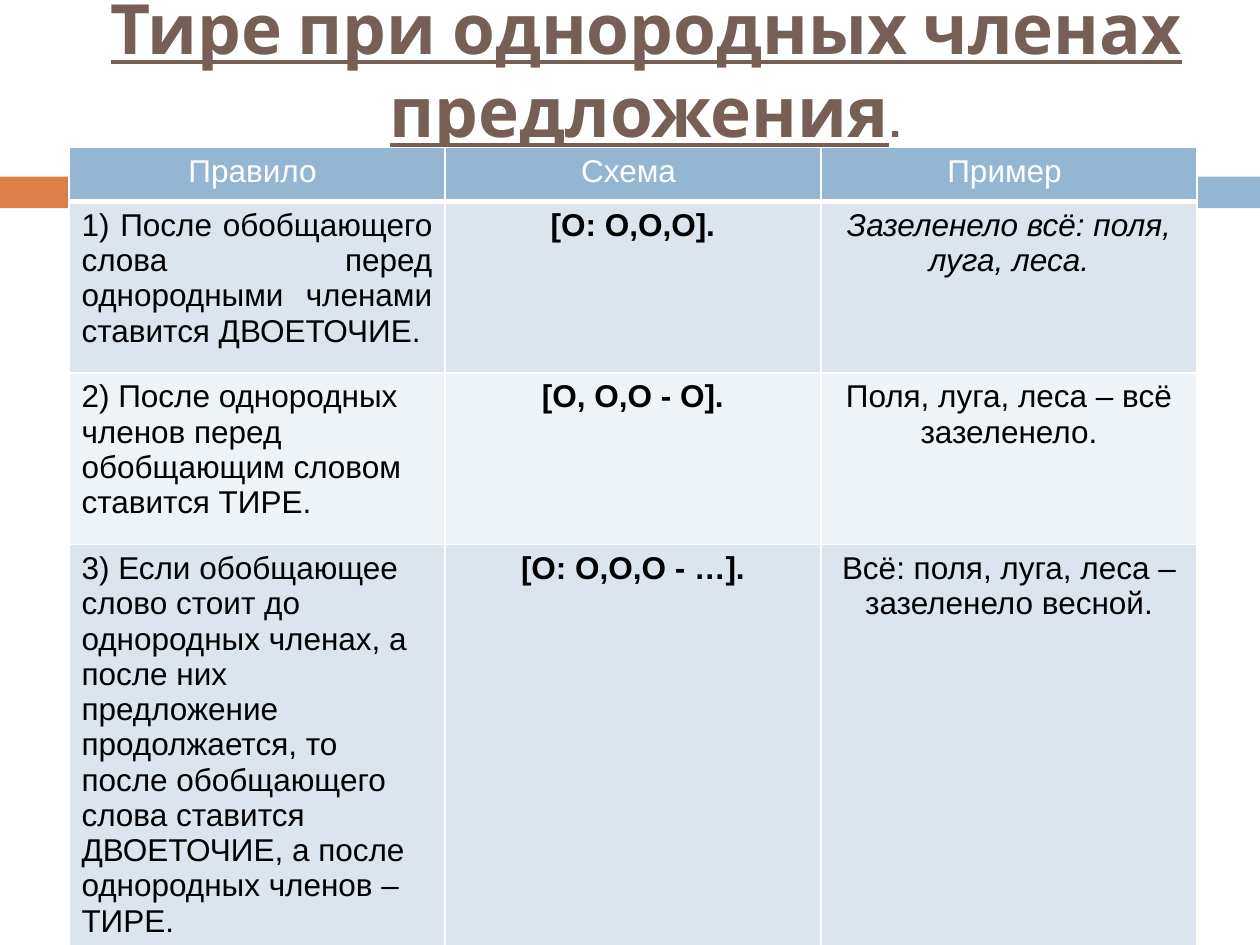
from dataclasses import dataclass

from lxml.etree import SubElement
from pptx import Presentation
from pptx.dml.color import RGBColor
from pptx.enum.shapes import MSO_SHAPE
from pptx.enum.text import MSO_ANCHOR, PP_ALIGN
from pptx.oxml.ns import qn
from pptx.slide import Slide
from pptx.table import _Cell
from pptx.util import Cm, Pt

COLORS = {
    "orange": "DD8047",
    "blue": "94B6D2",
    "brown": "775F55",
    "band_dark": "DCE5EE",
    "band_light": "EEF3F7",
    "white": "FFFFFF",
    "black": "000000",
}
COLUMN_WIDTH = Cm(7.58)
HEADINGS = ("Правило ", "Схема ", "Пример ")


@dataclass
class Stripe:
    left: float
    width: float
    color: str


@dataclass
class Rule:
    statement: str
    scheme: str
    example: str
    height: float
    statement_align: PP_ALIGN = PP_ALIGN.LEFT
    example_italic: bool = False


STRIPES = (Stripe(0, 1.48, "orange"), Stripe(1.65, 23.75, "blue"))
RULES = (
    Rule(
        "1) После обобщающего слова перед однородными членами ставится ДВОЕТОЧИЕ.",
        "[О: О,О,О].",
        "Зазеленело всё: поля, луга, леса.",
        3.46,
        statement_align=PP_ALIGN.JUSTIFY,
        example_italic=True,
    ),
    Rule(
        "2) После однородных членов перед обобщающим словом ставится ТИРЕ.",
        "[О, О,О - О].",
        "Поля, луга, леса – всё зазеленело.",
        3.46,
    ),
    Rule(
        "3) Если обобщающее слово стоит до однородных членах, а после них "
        "предложение продолжается, то после обобщающего слова ставится "
        "ДВОЕТОЧИЕ, а после однородных членов – ТИРЕ.",
        "[О: О,О,О - …].",
        "Всё: поля, луга, леса – зазеленело весной.",
        7.47,
    ),
)


def rgb(name: str) -> RGBColor:
    return RGBColor.from_string(COLORS[name])


def draw_stripe(slide: Slide, stripe: Stripe) -> None:
    bar = slide.shapes.add_shape(
        MSO_SHAPE.RECTANGLE, Cm(stripe.left), Cm(3.56), Cm(stripe.width), Cm(0.64)
    )
    bar.shadow.inherit = False
    bar.fill.solid()
    bar.fill.fore_color.rgb = rgb(stripe.color)
    bar.line.fill.background()


def draw_title(slide: Slide) -> None:
    frame = slide.shapes.add_textbox(Cm(1.7), Cm(0), Cm(22.66), Cm(2.77)).text_frame
    frame.word_wrap = True
    frame.vertical_anchor = MSO_ANCHOR.MIDDLE
    heading = frame.paragraphs[0]
    heading.alignment = PP_ALIGN.CENTER
    for words, emphasized in (
        ("Тире при однородных членах предложения", True),
        (".", False),
    ):
        run = heading.add_run()
        run.text = words
        run.font.name = "Cabin"
        run.font.size = Pt(39.6)
        run.font.bold = run.font.underline = emphasized
        run.font.color.rgb = rgb("brown")


def draw_borders(cell: _Cell, top: float, bottom: float) -> None:
    properties = cell._tc.get_or_add_tcPr()
    for side, width in (("L", 1), ("R", 1), ("T", top), ("B", bottom)):
        border = SubElement(properties, qn(f"a:ln{side}"), w=str(Pt(width)))
        fill = SubElement(border, qn("a:solidFill"))
        SubElement(fill, qn("a:srgbClr"), val=COLORS["white"])


def fill_cell(
    cell: _Cell,
    words: str,
    fill: str,
    color: str = "black",
    align: PP_ALIGN = PP_ALIGN.CENTER,
    bold: bool = False,
    italic: bool = False,
    top: float = 1,
    bottom: float = 1,
) -> None:
    draw_borders(cell, top, bottom)
    cell.fill.solid()
    cell.fill.fore_color.rgb = rgb(fill)
    cell.text_frame.text = words
    paragraph = cell.text_frame.paragraphs[0]
    paragraph.alignment = align
    font = paragraph.runs[0].font
    font.name = "Arial"
    font.size = Pt(18)
    font.bold = bold
    font.italic = italic
    font.color.rgb = rgb(color)


def draw_rules(slide: Slide) -> None:
    table = slide.shapes.add_table(
        len(RULES) + 1, len(HEADINGS), Cm(1.39), Cm(2.97), COLUMN_WIDTH * 3, Cm(15.48)
    ).table
    table.rows[0].height = Cm(1.09)
    for column, heading in enumerate(HEADINGS):
        table.columns[column].width = COLUMN_WIDTH
        fill_cell(table.cell(0, column), heading, "blue", color="white", bottom=3)
    for row, rule in enumerate(RULES, start=1):
        table.rows[row].height = Cm(rule.height)
        band = "band_dark" if row % 2 else "band_light"
        top = 3 if row == 1 else 1
        statement, scheme, example = table.rows[row].cells
        fill_cell(statement, rule.statement, band, align=rule.statement_align, top=top)
        fill_cell(scheme, rule.scheme, band, bold=True, top=top)
        fill_cell(example, rule.example, band, italic=rule.example_italic, top=top)


def main() -> None:
    presentation = Presentation()
    presentation.slide_width = Cm(25.4)
    presentation.slide_height = Cm(19.05)
    slide = presentation.slides.add_slide(presentation.slide_layouts[6])
    for stripe in STRIPES:
        draw_stripe(slide, stripe)
    draw_title(slide)
    draw_rules(slide)
    presentation.save("out.pptx")


if __name__ == "__main__":
    main()
